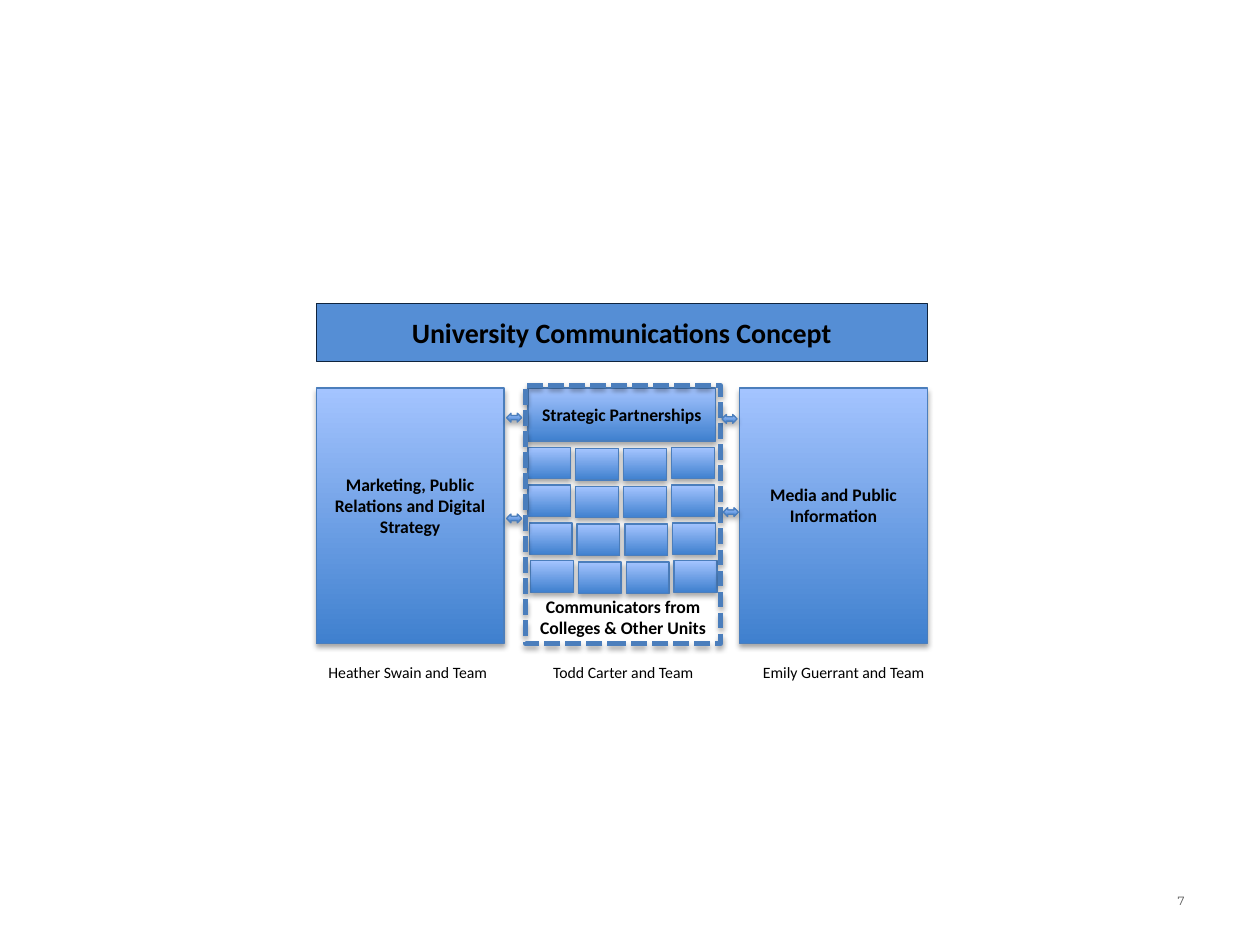
"""Build the University Communications Concept slide."""
from lxml import etree
from pptx import Presentation
from pptx import util as u
from pptx.dml.color import RGBColor
from pptx.enum import dml, shapes, text
from pptx.oxml.ns import qn

BLACK = RGBColor(0x00, 0x00, 0x00)
GRAY = RGBColor(0x59, 0x59, 0x59)
NAVY = RGBColor(0x0F, 0x24, 0x3E)
TITLE_BLUE = RGBColor(0x55, 0x8E, 0xD5)
LINE_BLUE = RGBColor(0x4B, 0x7E, 0xBC)
DEEP_BLUE = RGBColor(0x3F, 0x80, 0xCE)
PALE_BLUE = RGBColor(0xA4, 0xC4, 0xFF)

RECTANGLE = shapes.MSO_SHAPE.RECTANGLE
ARROW = shapes.MSO_SHAPE.LEFT_RIGHT_ARROW
CENTER = text.PP_ALIGN.CENTER
MIDDLE = text.MSO_ANCHOR.MIDDLE
TOP = text.MSO_ANCHOR.TOP

TITLE_FONT = {"name": "Calibri", "size": u.Pt(16), "bold": True}
BOX_FONT = {"name": "Calibri", "size": u.Pt(10.1), "bold": True}
TEAM_FONT = {"name": "Calibri", "size": u.Pt(9)}
NUMBER_FONT = {"name": "Montserrat", "size": u.Pt(6.8)}

PANEL_TOP, PANEL_WIDTH, PANEL_HEIGHT = 3.08, 1.49, 2.03
PANELS = [(2.51, "Marketing, Public Relations and Digital Strategy"),
          (5.87, "Media and Public Information")]
ARROWS = [(4.02, 3.28), (5.73, 3.29), (4.02, 4.08), (5.74, 4.03)]
TEAMS = [(2.39, "Heather Swain and Team"), (4.1, "Todd Carter and Team"),
         (5.85, "Emily Guerrant and Team")]


def set_attributes(target, values):
    """Set each named value on the target."""
    for name, value in values.items():
        setattr(target, name, value)


def write(shape, lines, font, color=BLACK, align=CENTER, anchor=MIDDLE, bottom=0.05):
    """Write the lines as paragraphs in the shape."""
    frame = shape.text_frame
    set_attributes(frame, {"word_wrap": True, "vertical_anchor": anchor,
                           "margin_bottom": u.Inches(bottom)})
    frame.text = "\n".join(lines)
    for paragraph in frame.paragraphs:
        paragraph.alignment = align
        set_attributes(paragraph.font, font)
        paragraph.font.color.rgb = color


def add_shape(slide, kind, box, line_color=LINE_BLUE, line_width=0.75):
    """Add an outlined shape without a shadow."""
    shape = slide.shapes.add_shape(kind, *map(u.Inches, box))
    shape.shadow.inherit = False
    shape.line.color.rgb = line_color
    shape.line.width = u.Pt(line_width)
    return shape


def add_shadow(shape):
    """Add a soft shadow below the shape."""
    effects = shape._element.spPr.find(qn("a:effectLst"))
    shadow = etree.SubElement(effects, qn("a:outerShdw"), blurRad=str(u.Pt(3.1)),
                              dist=str(u.Pt(1.8)), dir="5400000", rotWithShape="0")
    color = etree.SubElement(shadow, qn("a:srgbClr"), val=str(BLACK))
    etree.SubElement(color, qn("a:alpha"), val="35000")


def add_gradient_shape(slide, kind, box):
    """Add a shaded blue shape with a shadow."""
    shape = add_shape(slide, kind, box)
    shape.fill.gradient()
    shape.fill.gradient_angle = 90
    for stop, color in zip(shape.fill.gradient_stops, (DEEP_BLUE, PALE_BLUE)):
        stop.color.rgb = color
    add_shadow(shape)
    return shape


def add_label(slide, box, lines, font, **options):
    """Add a text box."""
    label = slide.shapes.add_textbox(*map(u.Inches, box))
    write(label, lines, font, **options)


def add_title(slide):
    """Add the title bar."""
    title = add_shape(slide, RECTANGLE, (2.51, 2.41, 4.85, 0.46), NAVY)
    title.fill.solid()
    title.fill.fore_color.rgb = TITLE_BLUE
    write(title, ["University Communications Concept"], TITLE_FONT)


def add_panels(slide):
    """Add the two outer panels."""
    for left, name in PANELS:
        box = (left, PANEL_TOP, PANEL_WIDTH, PANEL_HEIGHT)
        write(add_gradient_shape(slide, RECTANGLE, box), [name], BOX_FONT, bottom=0.22)


def add_units(slide):
    """Add the grid of units, each row drifting slightly to the right."""
    for row in range(4):
        for column in range(4):
            left = 4.19 + 0.38 * column + 0.01 * max(0, row - 1)
            top = 3.55 + 0.3 * row + (0.01 if column in (1, 2) else 0)
            add_gradient_shape(slide, RECTANGLE, (left, top, 0.34, 0.25))


def add_partnerships(slide):
    """Add the middle column with its dashed frame."""
    heading = add_gradient_shape(slide, RECTANGLE, (4.19, PANEL_TOP, PANEL_WIDTH, 0.42))
    write(heading, ["Strategic Partnerships"], BOX_FONT)
    set_attributes(heading.text_frame, {"margin_left": u.Inches(0.05),
                                        "margin_right": u.Inches(0.05)})
    add_units(slide)
    add_label(slide, (4.17, 4.68, 1.55, 0.44),
              ["Communicators from", "Colleges & Other Units"], BOX_FONT, anchor=TOP)
    frame = add_shape(slide, RECTANGLE, (4.17, 3.06, 1.55, 2.05), line_width=3)
    frame.fill.background()
    frame.line.dash_style = dml.MSO_LINE.SQUARE_DOT
    add_shadow(frame)


def main():
    """Build and save the slide."""
    presentation = Presentation()
    set_attributes(presentation, {"slide_width": u.Inches(10), "slide_height": u.Inches(7.5)})
    slide = presentation.slides.add_slide(presentation.slide_layouts[6])
    add_panels(slide)
    add_partnerships(slide)
    for left, top in ARROWS:
        add_gradient_shape(slide, ARROW, (left, top, 0.12, 0.07))
    for left, name in TEAMS:
        add_label(slide, (left, 5.21, 1.69, 0.25), [name], TEAM_FONT, anchor=TOP)
    add_title(slide)
    add_label(slide, (7.17, 6.95, 2.33, 0.4), ["7"], NUMBER_FONT,
              color=GRAY, align=text.PP_ALIGN.RIGHT)
    presentation.save("out.pptx")


if __name__ == "__main__":
    main()
